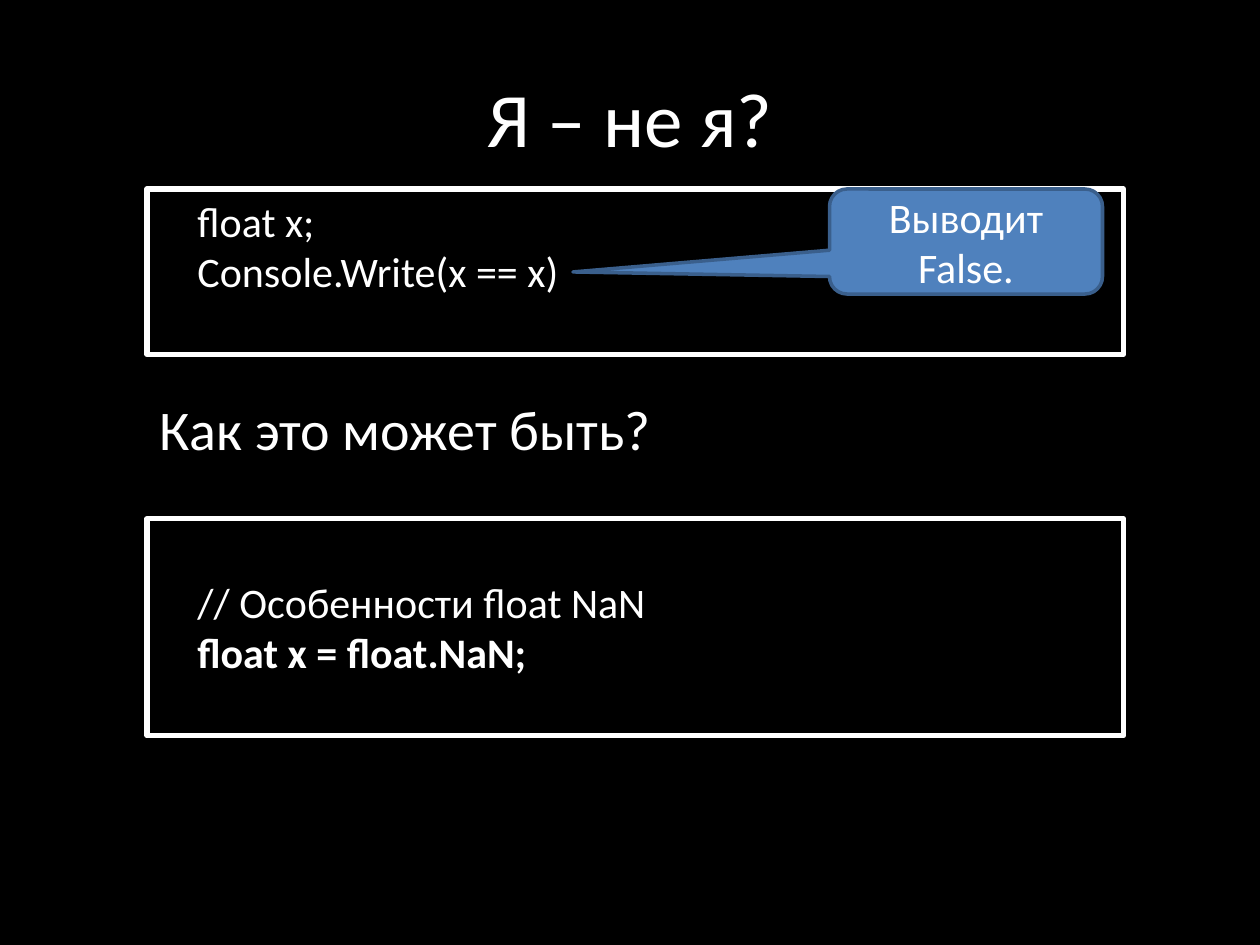
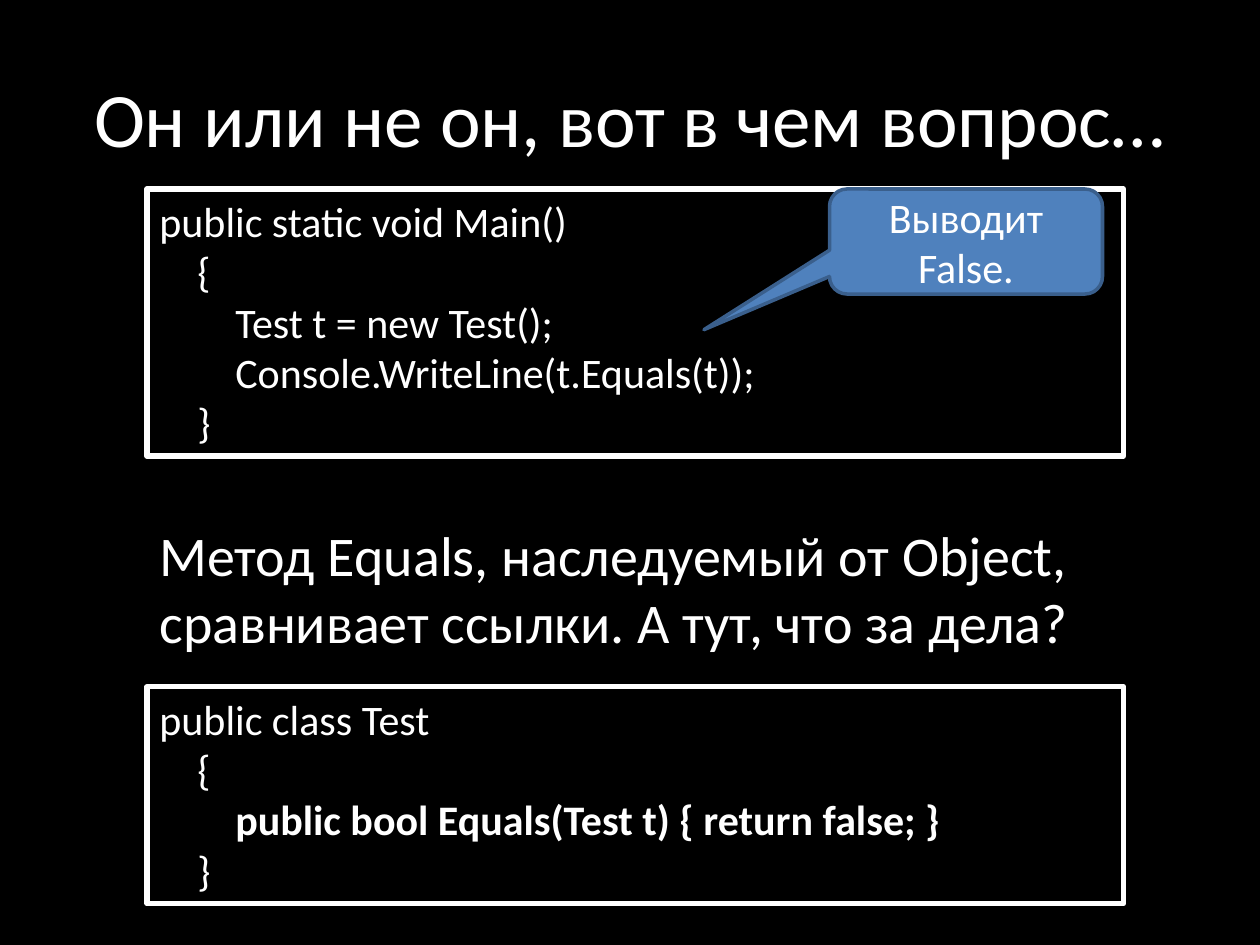
from dataclasses import dataclass

from pptx import Presentation
from pptx.dml.color import RGBColor
from pptx.enum.shapes import MSO_SHAPE
from pptx.enum.text import MSO_ANCHOR, PP_ALIGN
from pptx.util import Pt


@dataclass(frozen=True)
class Theme:
    background: RGBColor = RGBColor(0, 0, 0)
    ink: RGBColor = RGBColor(255, 255, 255)
    callout: RGBColor = RGBColor(0x4F, 0x81, 0xBD)
    callout_edge: RGBColor = RGBColor(0x3A, 0x5F, 0x8C)
    font: str = "Calibri"
    title_size: int = 44
    question_size: int = 32
    code_size: int = 24


THEME = Theme()

# Content: code lines are (indent level, text, bold); tops and heights in points
PUZZLES = [
    {
        "title": "Я – не я?",
        "code": {"top": 108, "height": 94.5, "lines": [
            (1, "float x;", False),
            (1, "Console.Write(x == x)", False),
        ]},
        "output": "Выводит False.",
        "pointer": (-1.44, 0.29),
        "question": {"top": 222, "height": 46, "text": "Как это может быть?"},
        "answer": {"top": 296.5, "height": 124, "skipped_lines": 1, "lines": [
            (1, "// Особенности float NaN", False),
            (1, "float x = float.NaN;", True),
        ]},
    },
    {
        "title": "Он или не он, вот в чем вопрос…",
        "code": {"top": 108, "height": 152.6, "lines": [
            (0, "public static void Main()", False),
            (1, "{", False),
            (2, "Test t = new Test();", False),
            (2, "Console.WriteLine(t.Equals(t));", False),
            (1, "}", False),
        ]},
        "output": "Выводит False.",
        "pointer": (-0.96, 0.84),
        "question": {"top": 294, "height": 85,
                     "text": "Метод Equals, наследуемый от Object, "
                             "сравнивает ссылки. А тут, что за дела?"},
        "answer": {"top": 392.5, "height": 124, "lines": [
            (0, "public class Test", False),
            (1, "{", False),
            (2, "public bool Equals(Test t) { return false; }", True),
            (1, "}", False),
        ]},
    },
]

# Shared layout, in points
TITLE_BOX = (36, 21.6, 648, 90)
COLUMN_LEFT, COLUMN_WIDTH = 84, 558
CALLOUT_BOX = (474, 108, 156, 60)
INDENT = 21.7
CODE_LINE_HEIGHT = THEME.code_size * 1.22
INSET_TOP = 3.6


def in_points(box):
    return [Pt(length) for length in box]


def write(shape, lines, size, align=PP_ALIGN.LEFT, anchor=MSO_ANCHOR.TOP, inset_top=INSET_TOP):
    frame = shape.text_frame
    frame.word_wrap = True
    frame.vertical_anchor = anchor
    frame.margin_top = Pt(inset_top)
    for number, (level, text, bold) in enumerate(lines):
        paragraph = frame.add_paragraph() if number else frame.paragraphs[0]
        paragraph.alignment = align
        if level:
            properties = paragraph._p.get_or_add_pPr()
            properties.set("marL", str(Pt(level * INDENT)))
            properties.set("indent", "0")
        run = paragraph.add_run()
        run.text = text
        run.font.name = THEME.font
        run.font.size = Pt(size)
        run.font.bold = bold
        run.font.color.rgb = THEME.ink


def add_code(slide, top, height, lines, skipped_lines=0):
    frame = slide.shapes.add_shape(
        MSO_SHAPE.RECTANGLE, *in_points((COLUMN_LEFT, top, COLUMN_WIDTH, height)))
    frame.shadow.inherit = False
    frame.fill.background()
    frame.line.color.rgb = THEME.ink
    frame.line.width = Pt(3)
    write(frame, lines, THEME.code_size,
          inset_top=INSET_TOP + skipped_lines * CODE_LINE_HEIGHT)


def add_question(slide, top, height, text):
    question = slide.shapes.add_textbox(*in_points((COLUMN_LEFT, top, COLUMN_WIDTH, height)))
    write(question, [(0, text, False)], THEME.question_size)


def add_output(slide, text, pointer):
    callout = slide.shapes.add_shape(MSO_SHAPE.ROUNDED_RECTANGULAR_CALLOUT,
                                     *in_points(CALLOUT_BOX))
    callout.shadow.inherit = False
    callout.adjustments[0], callout.adjustments[1] = pointer
    callout.fill.solid()
    callout.fill.fore_color.rgb = THEME.callout
    callout.line.color.rgb = THEME.callout_edge
    callout.line.width = Pt(2)
    write(callout, [(0, text, False)], THEME.code_size,
          align=PP_ALIGN.CENTER, anchor=MSO_ANCHOR.MIDDLE)


def add_puzzle(deck, puzzle):
    slide = deck.slides.add_slide(deck.slide_layouts.get_by_name("Title Only"))
    title = slide.shapes.title
    title.left, title.top, title.width, title.height = in_points(TITLE_BOX)
    write(title, [(0, puzzle["title"], False)], THEME.title_size,
          align=PP_ALIGN.CENTER, anchor=MSO_ANCHOR.MIDDLE)
    add_code(slide, **puzzle["code"])
    add_question(slide, **puzzle["question"])
    add_output(slide, puzzle["output"], puzzle["pointer"])
    add_code(slide, **puzzle["answer"])


def main():
    deck = Presentation()
    deck.slide_width, deck.slide_height = Pt(720), Pt(540)
    backdrop = deck.slide_master.background.fill
    backdrop.solid()
    backdrop.fore_color.rgb = THEME.background
    for puzzle in PUZZLES:
        add_puzzle(deck, puzzle)
    deck.save("out.pptx")


if __name__ == "__main__":
    main()
